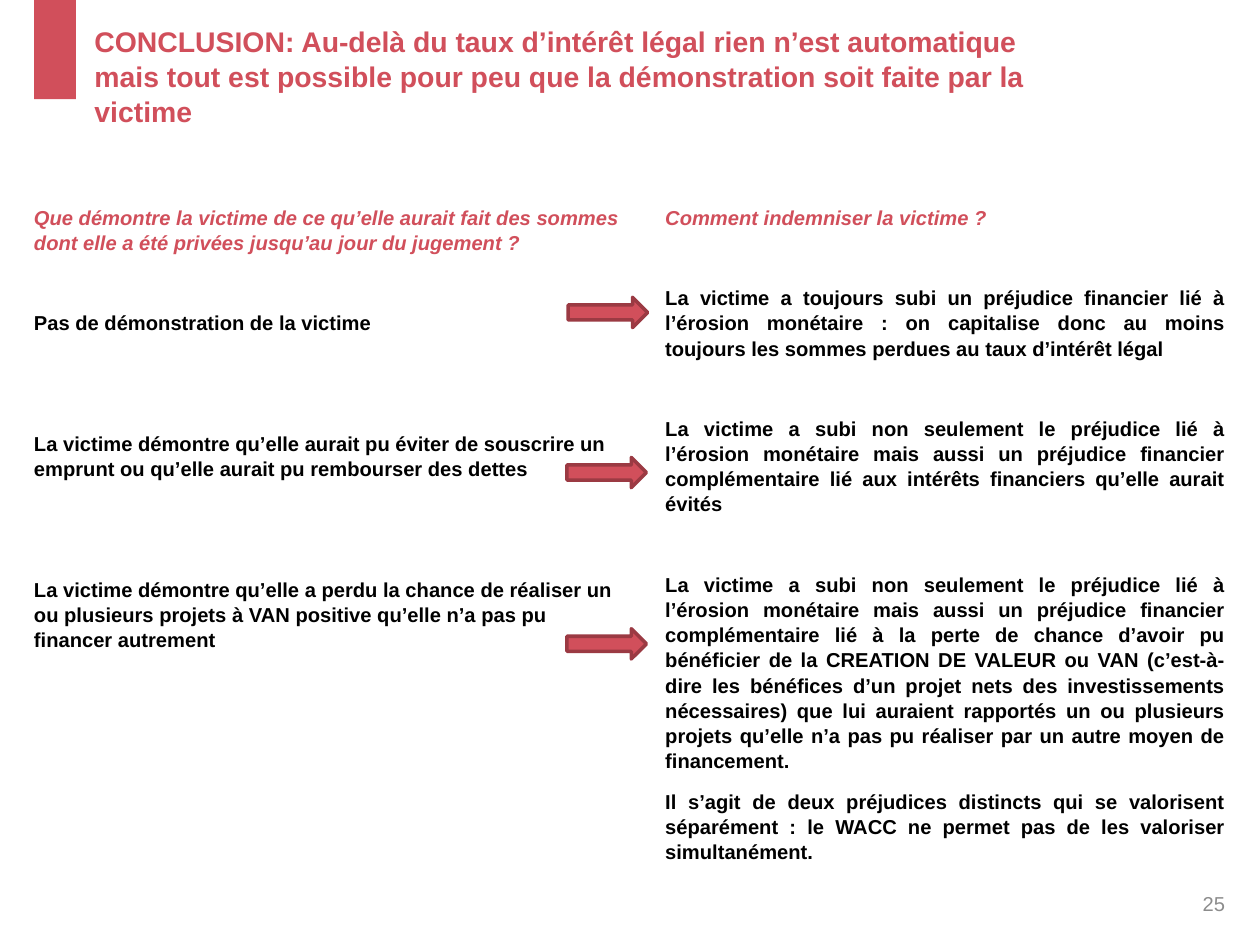
from pptx import Presentation, util as u
from pptx.dml.color import RGBColor
from pptx.enum import shapes, text

TITLE = ("CONCLUSION: Au-delà du taux d’intérêt légal rien n’est automatique mais tout est "
         "possible pour peu que la démonstration soit faite par la victime")
PAGE = "25"
COLUMNS = [
    dict(box=(19.44, 116.64, 340.56, 374.4), align="LEFT",
         head="Que démontre la victime de ce qu’elle aurait fait des sommes dont elle a été "
              "privées jusqu’au jour du jugement ?",
         body=[
             (1, "Pas de démonstration de la victime"),
             (2, "La victime démontre qu’elle aurait pu éviter de souscrire un emprunt ou "
                 "qu’elle aurait pu rembourser des dettes"),
             (2, "La victime démontre qu’elle a perdu la chance de réaliser un ou plusieurs "
                 "projets à VAN positive qu’elle n’a pas pu financer autrement"),
         ]),
    dict(box=(380.16, 116.64, 319.68, 374.4), align="JUSTIFY",
         head="Comment indemniser la victime ?",
         body=[
             (1, "La victime a toujours subi un préjudice financier lié à l’érosion monétaire : "
                 "on capitalise donc au moins toujours les sommes perdues au taux d’intérêt légal"),
             (1, "La victime a subi non seulement le préjudice lié à l’érosion monétaire mais "
                 "aussi un préjudice financier complémentaire lié aux intérêts financiers "
                 "qu’elle aurait évités"),
             (1, "La victime a subi non seulement le préjudice lié à l’érosion monétaire mais "
                 "aussi un préjudice financier complémentaire lié à la perte de chance d’avoir "
                 "pu bénéficier de la CREATION DE VALEUR ou VAN (c’est-à-dire les bénéfices d’un "
                 "projet nets des investissements nécessaires) que lui auraient rapportés un ou "
                 "plusieurs projets qu’elle n’a pas pu réaliser par un autre moyen de financement."),
             (0, "Il s’agit de deux préjudices distincts qui se valorisent séparément : le WACC "
                 "ne permet pas de les valoriser simultanément."),
         ]),
]
ARROWS = [(324.7, 169.9), (324, 261.4), (324, 359.3)]
ARROW_SIZE = (45.4, 17.3)

THEME = dict(font="Arial", accent="D14F5B", edge="9B3A43", ink="000000", muted="8C8C8C",
             title=16.2, body=11.5, leading=1.04, gap=9, blank=22.75)


def add_box(box, anchor="TOP"):
    tf = slide.shapes.add_textbox(*map(u.Pt, box)).text_frame
    tf.margin_left = tf.margin_right = tf.margin_top = tf.margin_bottom = 0
    tf.word_wrap = True
    tf.auto_size = text.MSO_AUTO_SIZE.NONE
    tf.vertical_anchor = text.MSO_ANCHOR[anchor]
    return tf


def write(tf, content, size=THEME["body"], color="ink", bold=True, italic=False,
          align="LEFT", before=0, leading=THEME["leading"]):
    p = tf.add_paragraph() if tf.text else tf.paragraphs[0]
    p.alignment = text.PP_ALIGN[align]
    p.space_before = u.Pt(before)
    p.line_spacing = leading
    r = p.add_run()
    r.text = content
    r.font.name, r.font.size = THEME["font"], u.Pt(size)
    r.font.bold, r.font.italic = bold, italic
    r.font.color.rgb = RGBColor.from_string(THEME[color])


def add_block(kind, box, edge=None):
    sp = slide.shapes.add_shape(shapes.MSO_SHAPE[kind], *map(u.Pt, box))
    sp.shadow.inherit = False
    sp.fill.solid()
    sp.fill.fore_color.rgb = RGBColor.from_string(THEME["accent"])
    if edge:
        sp.line.color.rgb = RGBColor.from_string(THEME[edge])
        sp.line.width = u.Pt(2)
    else:
        sp.line.fill.background()


prs = Presentation()
prs.slide_width, prs.slide_height = u.Pt(720), u.Pt(540)
slide = prs.slides.add_slide(prs.slide_layouts[6])

add_block("RECTANGLE", (19.44, 0, 24, 56.7))
write(add_box((54, 23.76, 561.6, 49.68), "BOTTOM"), TITLE, size=THEME["title"], color="accent")

for column in COLUMNS:
    tf = add_box(column["box"])
    write(tf, column["head"], color="accent", italic=True)
    for blanks, content in column["body"]:
        write(tf, content, align=column["align"], before=THEME["gap"] + blanks * THEME["blank"])

write(add_box((649.4, 502.6, 50.6, 28.8), "MIDDLE"), PAGE, color="muted", bold=False,
      align="RIGHT", leading=u.Pt(12))

for corner in ARROWS:
    add_block("RIGHT_ARROW", corner + ARROW_SIZE, edge="edge")

prs.save("out.pptx")
